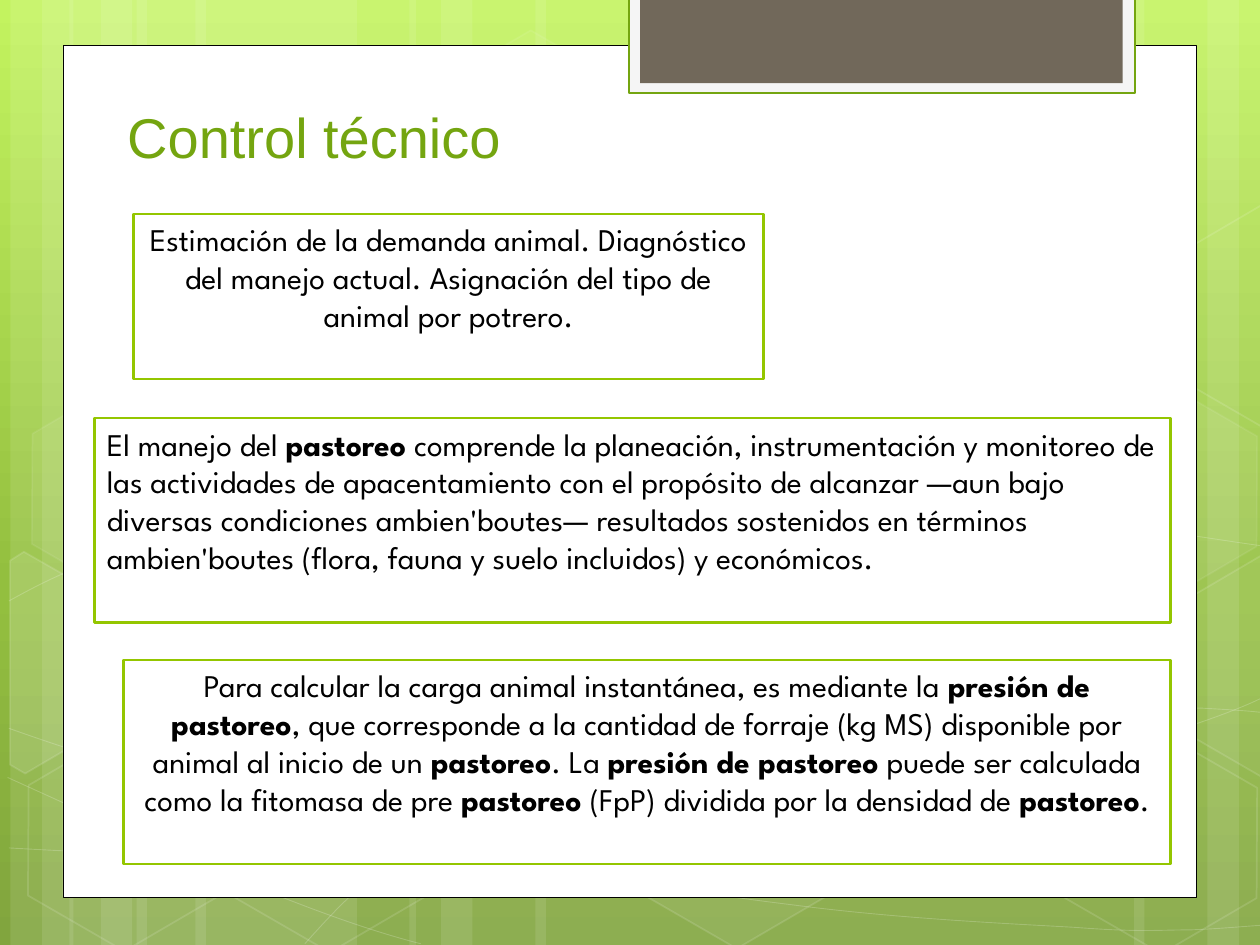
from copy import deepcopy
from typing import NamedTuple, Optional

from lxml.etree import SubElement
from pptx import Presentation
from pptx.dml.color import RGBColor
from pptx.enum.shapes import MSO_SHAPE as Shape
from pptx.enum.text import MSO_ANCHOR as Anchor, MSO_AUTO_SIZE as AutoSize, PP_ALIGN as Align
from pptx.oxml.ns import qn
from pptx.util import Inches, Pt

WHITE = RGBColor(0xFF, 0xFF, 0xFF)
BLACK = RGBColor(0, 0, 0)
GREEN = RGBColor(0x74, 0xA5, 0x10)
LIME = RGBColor(0x94, 0xC6, 0x00)
PALE = RGBColor(0xF5, 0xF5, 0xF5)
BROWN = RGBColor(0x71, 0x68, 0x5A)
BACKGROUND = [(0, RGBColor(0xC3, 0xF3, 0x5F)), (0.62, RGBColor(0x93, 0xBF, 0x3F)),
              (1, RGBColor(0x81, 0xA5, 0x3E))]
COLS, ROWS = 10, 7.5  # slide grid
BAND_UNIT = COLS / 120  # background bands sit on twelfths of a column


class Rect(NamedTuple):
    x: float
    y: float
    w: float
    h: float


class Hexagon(NamedTuple):
    x: float
    y: float
    fill: Optional[int]  # opacity in percent
    line: int


class Polygon(NamedTuple):
    points: list
    fill: Optional[int]
    line: int


class Note(NamedTuple):
    rect: Rect
    align: Align
    text: str  # ** switches bold on and off


# Left and width of each band, in band units
BANDS = [(13, 21), (1, 6), (4, 10), (18.6, 21), (6.6, 6), (9.6, 10), (88, 21),
         (115, 6), (108, 10), (51, 37), (39, 6), (42, 10)]

# Start point, then two control points and an end point per segment
CURVES = [
    [(0.07, 6.73), (0.61, 6.76), (1.15, 6.79), (1.9, 6.78), (2.65, 6.77), (3.58, 6.75),
     (4.58, 6.65), (5.58, 6.55), (7, 6.36), (7.92, 6.17), (8.83, 5.98), (9.77, 5.68), (10.07, 5.51)],
    [(0.07, 4.77), (0.36, 4.61), (0.65, 4.46), (1.21, 4.31), (1.78, 4.16), (2.59, 3.94),
     (3.47, 3.87), (4.36, 3.8), (5.44, 3.79), (6.54, 3.87), (7.64, 3.95), (9.47, 4.26), (10.07, 4.34)],
    [(0.06, 6.17), (1.27, 6.72), (2.47, 7.27), (3.34, 7.49)],
    [(0.07, 5.78), (0.38, 5.89), (0.7, 6), (1.28, 6.16), (1.86, 6.31), (2.73, 6.56), (3.57, 6.73),
     (4.4, 6.9), (5.45, 7.08), (6.28, 7.18), (7.11, 7.29), (8, 7.33), (8.53, 7.36),
     (9.05, 7.4), (9.19, 7.38), (9.45, 7.38), (9.71, 7.37), (9.89, 7.35), (10.07, 7.34)],
    [(2.42, 7.49), (2.6, 7.29), (2.78, 7.09), (3.02, 6.91), (3.26, 6.73), (3.6, 6.53), (3.88, 6.39),
     (4.16, 6.25), (4.33, 6.19), (4.7, 6.09), (5.06, 5.99), (5.73, 5.85), (6.08, 5.78),
     (6.44, 5.71), (6.49, 5.71), (6.8, 5.69), (7.11, 5.66), (7.6, 5.63), (7.94, 5.62),
     (8.29, 5.61), (8.86, 5.62), (8.86, 5.62), (9.08, 5.62), (9.31, 5.62), (9.53, 5.62),
     (9.71, 5.63), (9.88, 5.64), (9.97, 5.65), (10.06, 5.66), (10.03, 5.65), (10.06, 5.66)],
]

HEXAGONS = [
    Hexagon(3.34, 0.36, 4, 8), Hexagon(4.97, 5.89, 6, 12), Hexagon(0.11, 5.91, None, 12),
    Hexagon(0.14, 3.12, 7, 8), Hexagon(1.74, 5.92, None, 12), Hexagon(7.53, 4.53, 10, 12),
    Hexagon(8.34, 5.93, None, 12), Hexagon(8.34, 3.14, 7, 8),
]
# Hexagons cut off by the slide's edge
POLYGONS = [
    Polygon([(0.08, 4.45), (0.19, 4.38), (0.96, 4.82), (0.95, 5.7), (0.2, 6.14), (0.08, 6.07)], 10, 12),
    Polygon([(9.26, 4.85), (10.01, 4.41), (10.09, 4.46), (10.09, 6.13), (10.02, 6.17), (9.26, 5.73)], 4, 12),
    Polygon([(9.26, 2.07), (10.01, 1.63), (10.1, 1.68), (10.09, 3.35), (10.02, 3.39), (9.26, 2.95)], None, 12),
]

NOTES = [
    Note(Rect(1.06, 1.7, 5, 1.31), Align.CENTER,
         "Estimación de la demanda animal. Diagnóstico del manejo actual. "
         "Asignación del tipo de animal por potrero."),
    Note(Rect(0.75, 3.32, 8.54, 1.62), Align.LEFT,
         "El manejo del **pastoreo** comprende la planeación, instrumentación y monitoreo de "
         "las actividades de apacentamiento con el propósito de alcanzar —aun bajo diversas "
         "condiciones ambien'boutes— resultados sostenidos en términos ambien'boutes "
         "(flora, fauna y suelo incluidos) y económicos."),
    Note(Rect(0.98, 5.24, 8.31, 1.62), Align.CENTER,
         "Para calcular la carga animal instantánea, es mediante la **presión de pastoreo**, "
         "que corresponde a la cantidad de forraje (kg MS) disponible por animal al inicio de un "
         "**pastoreo**. La **presión de pastoreo** puede ser calculada como la fitomasa de pre "
         "**pastoreo** (FpP) dividida por la densidad de **pastoreo**."),
]

prs = Presentation()
prs.slide_width, prs.slide_height = Inches(10), Inches(7.5)
s = prs.slides.add_slide(prs.slide_layouts[5])


def col(n: float) -> int:
    return round(prs.slide_width * n / COLS)


def row(n: float) -> int:
    return round(prs.slide_height * n / ROWS)


def paint(fill, color: Optional[RGBColor], opacity: int = 100) -> None:
    if color is None:
        fill.background()
        return
    fill.solid()
    fill.fore_color.rgb = color
    if opacity < 100:
        clr = fill._xPr.find(qn("a:solidFill")).find(qn("a:srgbClr"))
        SubElement(clr, qn("a:alpha")).set("val", str(opacity * 1000))


def style(sp, fill, line, width: float = 1, fill_opacity: int = 100, line_opacity: int = 100) -> None:
    sp.shadow.inherit = False
    paint(sp.fill, fill, fill_opacity)
    paint(sp.line.fill, line, line_opacity)
    if line is not None:
        sp.line.width = Pt(width)


def add_box(rect: Rect, kind=Shape.RECTANGLE):
    return s.shapes.add_shape(kind, col(rect.x), row(rect.y), col(rect.w), row(rect.h))


def add_outline(points: list, close: bool):
    pts = [(col(x), row(y)) for x, y in points]
    builder = s.shapes.build_freeform(*pts[0])
    builder.add_line_segments(pts[1:], close=close)
    return builder.convert_to_shape()


def add_curve(points: list):
    """Draw the points as a chain of cubic curves."""
    sp = add_outline(points, False)
    outline = sp._element.find(".//" + qn("a:path"))
    steps = outline.findall(qn("a:lnTo"))
    for i in range(0, len(steps), 3):
        cubic = SubElement(outline, qn("a:cubicBezTo"))
        for step in steps[i:i + 3]:
            cubic.append(step[0])
            outline.remove(step)
    return sp


def add_faint(sp, part) -> None:
    style(sp, None if part.fill is None else WHITE, WHITE, 1, part.fill or 100, part.line)


def add_note(note: Note) -> None:
    sp = add_box(note.rect)
    style(sp, WHITE, LIME, 1.25)
    tf = sp.text_frame
    tf.word_wrap, tf.vertical_anchor = True, Anchor.TOP
    p = tf.paragraphs[0]
    p.alignment = note.align
    for i, text in enumerate(note.text.split("**")):
        r = p.add_run()
        r.text = text
        r.font.name, r.font.size, r.font.bold = "League Spartan", Pt(18), i % 2 == 1
        r.font.color.rgb = BLACK


# Background gradient
fill = s.background.fill
fill.gradient()
fill.gradient_angle = 270
stops = s._element.find(".//" + qn("a:gsLst"))
stops.append(deepcopy(stops[-1]))
for stop, (position, color) in zip(fill.gradient_stops, BACKGROUND):
    stop.position, stop.color.rgb = position, color

# Background bands, curves and hexagons
for left, width in BANDS:
    style(add_box(Rect(left * BAND_UNIT, 0, width * BAND_UNIT, ROWS)), WHITE, None, fill_opacity=10)
for curve in CURVES:
    style(add_curve(curve), None, WHITE, 0.5, line_opacity=20)
for hexagon in HEXAGONS:
    sp = add_box(Rect(hexagon.x, hexagon.y, 1.75, 1.52), Shape.HEXAGON)
    sp.adjustments[0], sp.adjustments[1] = 0.285, 1.155
    sp.rotation = 30
    add_faint(sp, hexagon)
for polygon in POLYGONS:
    add_faint(add_outline(polygon.points, True), polygon)

# Page and tab
style(add_box(Rect(0.5, 0.36, 9, 6.76)), WHITE, BLACK, 0.5)
style(add_box(Rect(4.99, -0.02, 4.02, 0.76)), PALE, GREEN, 1.25)
style(add_box(Rect(5.08, -0.02, 3.83, 0.68)), BROWN, None)

# Title, moved in front of the page
title = s.shapes.title
s.shapes._spTree.append(title._element)
title.left, title.top, title.width, title.height = col(0.91), row(0.76), col(3.19), row(0.64)
tf = title.text_frame
tf.text = "Control técnico"
tf.word_wrap, tf.auto_size, tf.vertical_anchor = False, AutoSize.NONE, Anchor.TOP
p = tf.paragraphs[0]
p.alignment = Align.LEFT
font = p.runs[0].font
font.name, font.size, font.color.rgb = "Arial", Pt(32), GREEN

# Notes
for note in NOTES:
    add_note(note)

prs.save("out.pptx")
